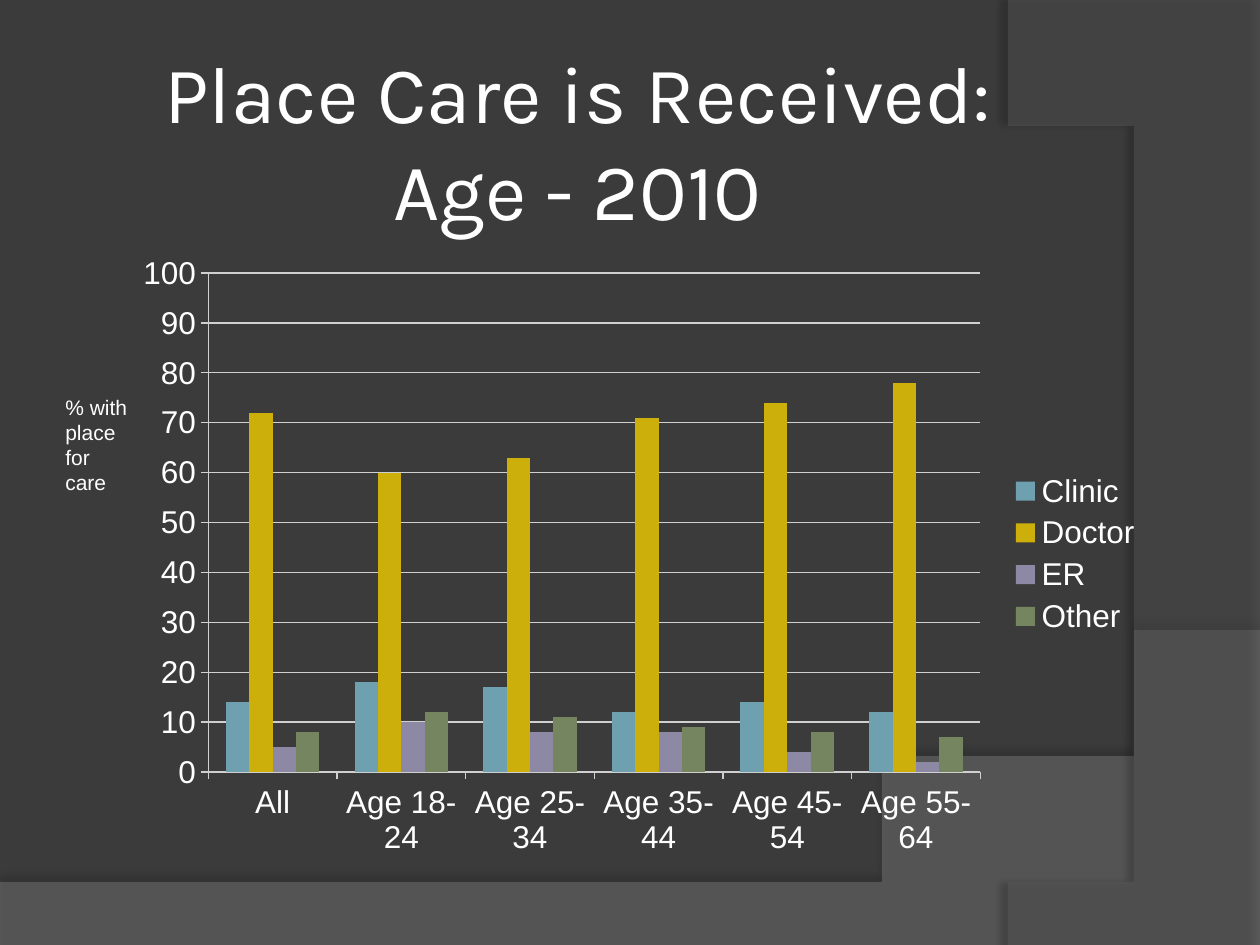
import pptx
import pptx.chart.data
import pptx.dml.color
import pptx.enum.chart
import pptx.enum.text
import pptx.oxml
import pptx.oxml.ns
import pptx.util
from pptx.util import Inches

RGBColor = pptx.dml.color.RGBColor
BACKGROUND = RGBColor(0x3B, 0x3B, 0x3B)
WHITE = RGBColor(0xFF, 0xFF, 0xFF)
GRID = RGBColor(0xD0, 0xD0, 0xD0)
WAVE = RGBColor(0x7F, 0x7F, 0x7F)
ARC = RGBColor(0x5E, 0x5E, 0x5E)
CLINIC = RGBColor(0x6E, 0xA0, 0xB0)
DOCTOR = RGBColor(0xCC, 0xAF, 0x0A)
ER = RGBColor(0x8D, 0x89, 0xA4)
OTHER = RGBColor(0x74, 0x85, 0x60)
NAMESPACES = pptx.oxml.ns.nsdecls("a")


def add_text(page, lines, left, top, width, height, font, size, align, top_inset=0.05):
    box = page.shapes.add_textbox(Inches(left), Inches(top), Inches(width), Inches(height))
    frame = box.text_frame
    frame.word_wrap = True
    frame.margin_top = Inches(top_inset)
    for index, line in enumerate(lines):
        para = frame.paragraphs[0] if index == 0 else frame.add_paragraph()
        para.alignment = align
        span = para.add_run()
        span.text = line
        span.font.name = font
        span.font.size = pptx.util.Pt(size)
        span.font.color.rgb = WHITE


def curve_points(start, first, second, end, steps=48):
    """Points along a cubic curve, for an outline made of short lines."""
    points = []
    for step in range(steps + 1):
        t = step / steps
        weights = ((1 - t) ** 3, 3 * t * (1 - t) ** 2, 3 * t * t * (1 - t), t ** 3)
        points.append(tuple(
            sum(w * p[axis] for w, p in zip(weights, (start, first, second, end)))
            for axis in (0, 1)))
    return points


deck = pptx.Presentation()
deck.slide_width = Inches(10)
deck.slide_height = Inches(7.5)
page = deck.slides.add_slide(deck.slide_layouts[6])
page.background.fill.solid()
page.background.fill.fore_color.rgb = BACKGROUND

# Background curves: outline, colour, opacity %, shadow opacity %, distance, direction
wave = [(0, 7.51), (10, 7.51)] + curve_points((10, 5.2), (5.59, 7.29), (3.91, 7.19), (0, 7.05))
arc = [(10, 0.02), (10, 7.5)] + curve_points((8.21, 7.5), (9.35, 6.19), (10.18, 3), (8, 0))
for outline, color, opacity, shade, distance, direction in (
        (wave, WAVE, 45, 35, 3.5, 270), (arc, ARC, 40, 45, 4, 180)):
    builder = page.shapes.build_freeform(*outline[0], scale=Inches(1))
    builder.add_line_segments(outline[1:], close=True)
    shape = builder.convert_to_shape()
    shape.line.fill.background()
    shape.fill.solid()
    shape.fill.fore_color.rgb = color
    properties = shape.element.spPr
    properties.find(".//" + pptx.oxml.ns.qn("a:srgbClr")).append(
        pptx.oxml.parse_xml(f'<a:alpha {NAMESPACES} val="{opacity * 1000}"/>'))
    properties.append(pptx.oxml.parse_xml(
        f'<a:effectLst {NAMESPACES}><a:outerShdw blurRad="{pptx.util.Pt(4)}" '
        f'dist="{pptx.util.Pt(distance)}" dir="{direction * 60000}" rotWithShape="0">'
        f'<a:srgbClr val="000000"><a:alpha val="{shade * 1000}"/></a:srgbClr>'
        '</a:outerShdw></a:effectLst>'))

# Title
add_text(page, ["Place Care is Received:", "Age - 2010"], 0.5, 0.25, 8.17, 1.58,
         font="Karla", size=46, align=pptx.enum.text.PP_ALIGN.CENTER, top_inset=0.09)

# Chart
series_data = (
    ("Clinic", CLINIC, (14, 18, 17, 12, 14, 12)),
    ("Doctor", DOCTOR, (72, 60, 63, 71, 74, 78)),
    ("ER", ER, (5, 10, 8, 8, 4, 2)),
    ("Other", OTHER, (8, 12, 11, 9, 8, 7)),
)
data = pptx.chart.data.CategoryChartData()
data.categories = ["All", "Age 18-24", "Age 25-34", "Age 35-44", "Age 45-54", "Age 55-64"]
for name, color, values in series_data:
    data.add_series(name, values)
chart = page.shapes.add_chart(
    pptx.enum.chart.XL_CHART_TYPE.COLUMN_CLUSTERED,
    Inches(1), Inches(1.92), Inches(8.17), Inches(4.95), data).chart
chart.has_title = False
chart.font.name = "Arial"
chart.font.size = pptx.util.Pt(18)
chart.font.color.rgb = WHITE
chart.has_legend = True
chart.legend.position = pptx.enum.chart.XL_LEGEND_POSITION.RIGHT
chart.legend.include_in_layout = False

plot = chart.plots[0]
plot.gap_width = 150
plot.overlap = 0
plot.vary_by_categories = False
for series, (name, color, values) in zip(plot.series, series_data):
    series.format.fill.solid()
    series.format.fill.fore_color.rgb = color

# Axes and gridlines
value_axis = chart.value_axis
value_axis.minimum_scale = 0
value_axis.maximum_scale = 100
value_axis.major_unit = 10
value_axis.has_major_gridlines = True
for line in (value_axis.format.line, chart.category_axis.format.line,
             value_axis.major_gridlines.format.line):
    line.color.rgb = GRID
    line.width = pptx.util.Pt(0.75)
for axis in (value_axis, chart.category_axis):
    axis.major_tick_mark = pptx.enum.chart.XL_TICK_MARK.OUTSIDE

# Fixed inner plot area, as fractions of the chart
plot_area = plot._element.getparent()
for old_layout in plot_area.findall(pptx.oxml.ns.qn("c:layout")):
    plot_area.remove(old_layout)
plot_area.insert(0, pptx.oxml.parse_xml(
    f'<c:layout {pptx.oxml.ns.nsdecls("c")}><c:manualLayout>'
    '<c:layoutTarget val="inner"/><c:xMode val="edge"/><c:yMode val="edge"/>'
    '<c:x val="0.08"/><c:y val="0.05"/><c:w val="0.75"/><c:h val="0.8"/>'
    '</c:manualLayout></c:layout>'))

# Axis caption
add_text(page, ["% with place for care"], 0.42, 3.08, 0.75, 0.91,
         font="Arial", size=12, align=pptx.enum.text.PP_ALIGN.LEFT)

deck.save("out.pptx")
